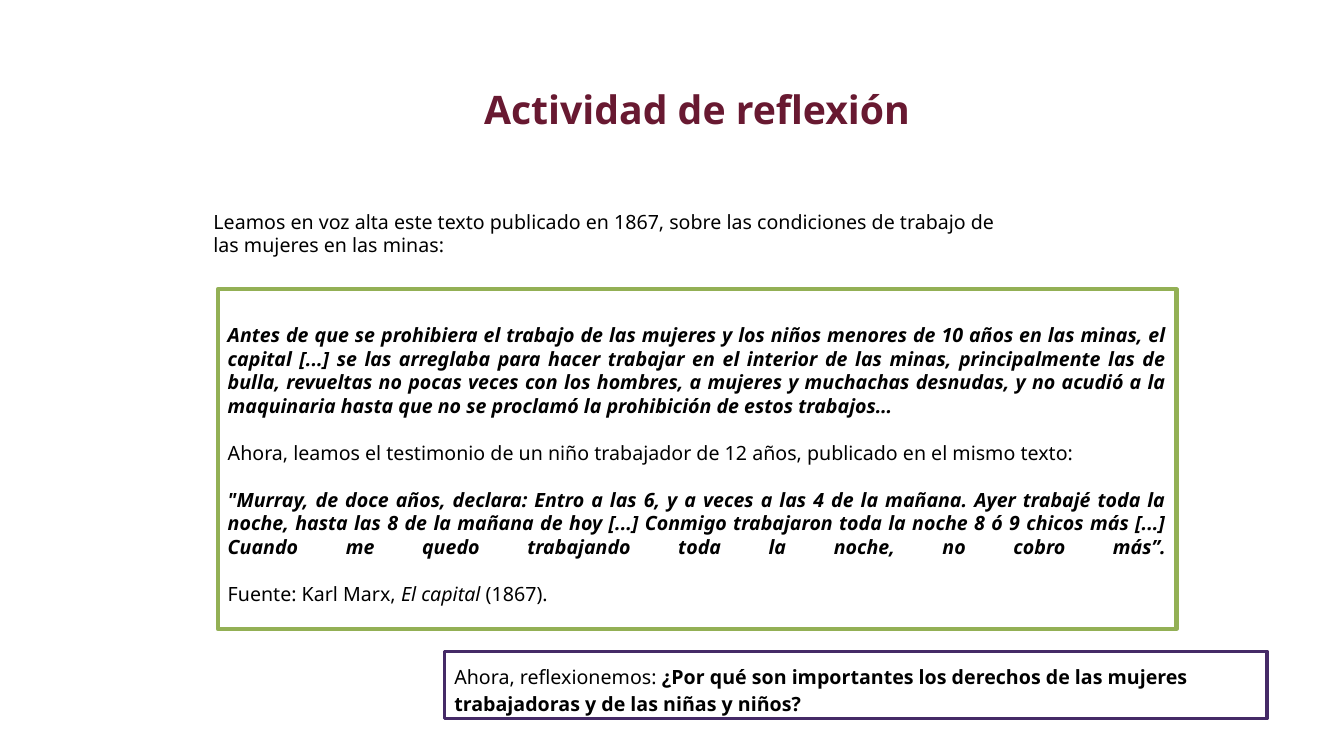
"""Builds the reflection activity slide."""
from lxml.etree import SubElement
from pptx import Presentation
from pptx.dml.color import RGBColor
from pptx.enum.shapes import MSO_SHAPE
from pptx.enum.text import MSO_ANCHOR, MSO_AUTO_SIZE, PP_ALIGN
from pptx.oxml.ns import qn
from pptx.util import Cm, Pt

COLORS = {"title": "681931", "text": "000000", "quote": "93B055", "question": "452A67"}
FONT = "Noto Sans"
BODY_SIZE = 14
LINE_GAP = 16.8
INSET = 0.25
BREAK = "\n"
STRONG = {"bold": True, "italic": True}

INTRO = ("Leamos en voz alta este texto publicado en 1867, sobre las condiciones "
         "de trabajo de las mujeres en las minas:")
MINES = ("Antes de que se prohibiera el trabajo de las mujeres y los niños menores de "
         "10 años en las minas, el capital [...] se las arreglaba para hacer trabajar en "
         "el interior de las minas, principalmente las de bulla, revueltas no pocas veces "
         "con los hombres, a mujeres y muchachas desnudas, y no acudió a la maquinaria "
         "hasta que no se proclamó la prohibición de estos trabajos…")
TESTIMONY_LEAD = ("Ahora, leamos el testimonio de un niño trabajador de 12 años, "
                  "publicado en el mismo texto:")
TESTIMONY = ("\"Murray, de doce años, declara: Entro a las 6, y a veces a las 4 de la "
             "mañana. Ayer trabajé toda la noche, hasta las 8 de la mañana de hoy [...] "
             "Conmigo trabajaron toda la noche 8 ó 9 chicos más [...] Cuando me quedo "
             "trabajando toda la noche, no cobro más”.")
QUESTION = (" ¿Por qué son importantes los derechos de las mujeres trabajadoras "
            "y de las niñas y niños?")


def write(para, text, size=BODY_SIZE, color="text", bold=False, italic=False):
    """Add one formatted span, or a line break of the same size, to a paragraph."""
    if text == BREAK:
        para.add_line_break()
        line_break = para._p.findall(qn("a:br"))[-1]
        SubElement(line_break, qn("a:rPr"), sz=str(size * 100))
        return
    span = para.add_run()
    span.text = text
    font = span.font
    font.name, font.size, font.bold, font.italic = FONT, Pt(size), bold, italic
    font.color.rgb = RGBColor.from_string(COLORS[color])


def prepare_frame(shape, anchor=MSO_ANCHOR.TOP, top=INSET, bottom=INSET):
    """Set wrapping, anchor and insets, and return the text frame."""
    frame = shape.text_frame
    frame.word_wrap = True
    frame.auto_size = MSO_AUTO_SIZE.NONE
    frame.vertical_anchor = anchor
    frame.margin_left = frame.margin_right = Cm(INSET)
    frame.margin_top, frame.margin_bottom = Cm(top), Cm(bottom)
    return frame


def add_frame_box(page, box, color, line_width, top=INSET):
    """Draw an outlined rectangle and return its text frame."""
    shape = page.shapes.add_shape(MSO_SHAPE.RECTANGLE, *map(Cm, box))
    shape.shadow.inherit = False
    shape.fill.background()
    shape.line.color.rgb = RGBColor.from_string(COLORS[color])
    shape.line.width = Pt(line_width)
    return prepare_frame(shape, top=top)


def add_title(page, box):
    """Place and format the slide title."""
    title = page.shapes.title
    title.left, title.top, title.width, title.height = map(Cm, box)
    frame = prepare_frame(title, MSO_ANCHOR.MIDDLE, top=0.13, bottom=0.13)
    para = frame.paragraphs[0]
    para.alignment = PP_ALIGN.CENTER
    write(para, "Actividad de reflexión", size=28, color="title", bold=True)


def add_intro(page, box):
    """Place the reading instruction."""
    frame = prepare_frame(page.shapes.add_textbox(*map(Cm, box)))
    write(frame.paragraphs[0], INTRO)


def add_quotes(page, box):
    """Place the framed quotations with their source."""
    frame = add_frame_box(page, box, "quote", 3, top=0.85)
    passages = [
        (PP_ALIGN.JUSTIFY, [(MINES, STRONG)]),
        (PP_ALIGN.LEFT, [(TESTIMONY_LEAD, {})]),
        (PP_ALIGN.JUSTIFY, [(TESTIMONY, STRONG), (BREAK, {}), (BREAK, {}),
                            ("Fuente: Karl Marx, ", {}),
                            ("El capital", {"italic": True}), (" (1867).", {})]),
    ]
    for index, (alignment, spans) in enumerate(passages):
        para = frame.add_paragraph() if index else frame.paragraphs[0]
        para.alignment = alignment
        if index:
            para.space_before = Pt(LINE_GAP)
        for text, style in spans:
            write(para, text, **style)


def add_question(page, box):
    """Place the framed closing question."""
    para = add_frame_box(page, box, "question", 2.25).paragraphs[0]
    para.alignment = PP_ALIGN.LEFT
    para.line_spacing = 1.15
    write(para, "Ahora, reflexionemos:")
    write(para, QUESTION, bold=True)


def main():
    """Build and save the deck."""
    deck = Presentation()
    deck.slide_width, deck.slide_height = Cm(33.87), Cm(19.05)
    page = deck.slides.add_slide(deck.slide_layouts[5])
    add_title(page, (9.45, 1.83, 16.23, 1.83))
    add_quotes(page, (5.49, 7.29, 24.16, 8.56))
    add_question(page, (11.2, 16.41, 20.73, 1.7))
    add_intro(page, (5.13, 5.03, 20.93, 1.7))
    deck.save("out.pptx")


if __name__ == "__main__":
    main()
